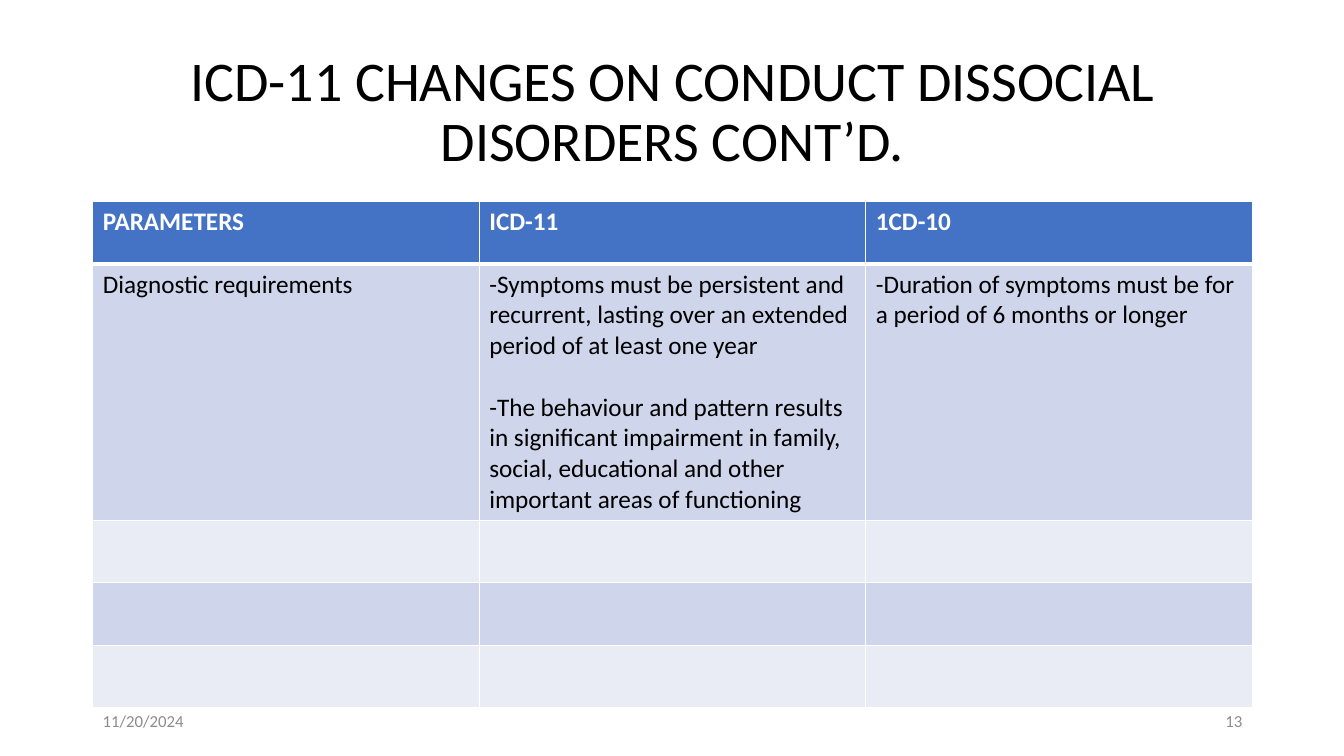
from dataclasses import dataclass

from lxml.etree import SubElement
from pptx import Presentation
from pptx.dml.color import RGBColor
from pptx.enum.text import MSO_ANCHOR, MSO_AUTO_SIZE, PP_ALIGN
from pptx.oxml.ns import qn
from pptx.slide import Slide
from pptx.table import _Cell
from pptx.text.text import TextFrame
from pptx.util import Inches, Pt

WHITE = RGBColor(0xFF, 0xFF, 0xFF)
BLACK = RGBColor(0x00, 0x00, 0x00)
GREY = RGBColor(0x8C, 0x8C, 0x8C)
HEADER_BLUE = RGBColor(0x44, 0x72, 0xC4)
BANDS = (RGBColor(0xE9, 0xEB, 0xF5), RGBColor(0xCF, 0xD5, 0xEA))

PAGE_WIDTH, PAGE_HEIGHT = Inches(13.33), Inches(7.5)
MARGIN = Inches(0.92)
CONTENT_WIDTH = Inches(11.5)
FOOTER_WIDTH = Inches(3)
TABLE_TOP = Inches(2)
ROW_HEIGHTS = [Inches(height) for height in (0.62, 2.39, 0.62, 0.62, 0.62)]
COLUMN_COUNT = 3
BLANK_LINE = Pt(22)

TITLE = "ICD-11 CHANGES ON CONDUCT DISSOCIAL DISORDERS CONT’D."
COMPARISON = [
    [["PARAMETERS"], ["ICD-11"], ["1CD-10"]],
    [
        ["Diagnostic requirements"],
        [
            "-Symptoms must be persistent and recurrent, lasting over an "
            "extended period of at least one year",
            "-The behaviour and pattern results in significant impairment in "
            "family, social, educational and other important areas of functioning",
        ],
        ["-Duration of symptoms must be for a period of 6 months or longer"],
    ],
]


@dataclass(frozen=True)
class TextStyle:
    size: int
    color: RGBColor
    bold: bool = False
    align: PP_ALIGN = PP_ALIGN.LEFT
    line_spacing: float = 1.0


@dataclass(frozen=True)
class Footer:
    text: str
    left: int
    align: PP_ALIGN


TITLE_STYLE = TextStyle(40, BLACK, align=PP_ALIGN.CENTER, line_spacing=0.9)
HEADER_STYLE = TextStyle(18, WHITE, bold=True)
BODY_STYLE = TextStyle(18, BLACK)
FOOTERS = (
    Footer("11/20/2024", MARGIN, PP_ALIGN.LEFT),
    Footer("13", MARGIN + CONTENT_WIDTH - FOOTER_WIDTH, PP_ALIGN.RIGHT),
)


def write(frame: TextFrame, lines: list[str], style: TextStyle) -> None:
    """Fill a frame, leaving one line of space between its paragraphs."""
    for index, line in enumerate(lines):
        para = frame.add_paragraph() if index else frame.paragraphs[0]
        para.alignment = style.align
        para.line_spacing = style.line_spacing
        para.space_before = BLANK_LINE if index else Pt(0)
        span = para.add_run()
        span.text = line
        span.font.color.rgb = style.color
        formats = {"name": "Calibri", "size": Pt(style.size), "bold": style.bold}
        for name, value in formats.items():
            setattr(span.font, name, value)


def add_title(page: Slide) -> None:
    box = page.shapes.title
    places = {"left": MARGIN, "top": Inches(0.4),
              "width": CONTENT_WIDTH, "height": Inches(1.45)}
    for name, value in places.items():
        setattr(box, name, value)
    frame = box.text_frame
    settings = {"word_wrap": True, "auto_size": MSO_AUTO_SIZE.NONE,
                "vertical_anchor": MSO_ANCHOR.MIDDLE}
    for name, value in settings.items():
        setattr(frame, name, value)
    write(frame, [TITLE], TITLE_STYLE)


def set_borders(cell: _Cell, widths: dict[str, int]) -> None:
    """Draw white borders, given as widths in points by side (L, R, T, B)."""
    properties = cell._tc.get_or_add_tcPr()
    for side, width in widths.items():
        line = SubElement(properties, qn(f"a:ln{side}"), w=str(Pt(width)))
        fill = SubElement(line, qn("a:solidFill"))
        SubElement(fill, qn("a:srgbClr"), val=str(WHITE))


def add_comparison(page: Slide) -> None:
    table = page.shapes.add_table(
        len(ROW_HEIGHTS), COLUMN_COUNT, MARGIN, TABLE_TOP,
        CONTENT_WIDTH, sum(ROW_HEIGHTS),
    ).table
    for row, height in zip(table.rows, ROW_HEIGHTS):
        row.height = height
    for row_index, row in enumerate(table.rows):
        is_header = row_index == 0
        for cell in row.cells:
            set_borders(cell, {"L": 1, "R": 1,
                               "T": 3 if row_index == 1 else 1,
                               "B": 3 if is_header else 1})
            cell.fill.solid()
            cell.fill.fore_color.rgb = HEADER_BLUE if is_header else BANDS[row_index % 2]
    for row, texts in zip(table.rows, COMPARISON):
        style = HEADER_STYLE if texts is COMPARISON[0] else BODY_STYLE
        for cell, lines in zip(row.cells, texts):
            write(cell.text_frame, lines, style)


def add_footer(page: Slide, footer: Footer) -> None:
    box = page.shapes.add_textbox(footer.left, Inches(6.95), FOOTER_WIDTH, Inches(0.4))
    frame = box.text_frame
    frame.word_wrap = True
    frame.vertical_anchor = MSO_ANCHOR.MIDDLE
    write(frame, [footer.text], TextStyle(12, GREY, align=footer.align))


def main() -> None:
    deck = Presentation()
    deck.slide_width, deck.slide_height = PAGE_WIDTH, PAGE_HEIGHT
    page = deck.slides.add_slide(deck.slide_layouts.get_by_name("Title Only"))
    add_title(page)
    add_comparison(page)
    for footer in FOOTERS:
        add_footer(page, footer)
    deck.save("out.pptx")


if __name__ == "__main__":
    main()
